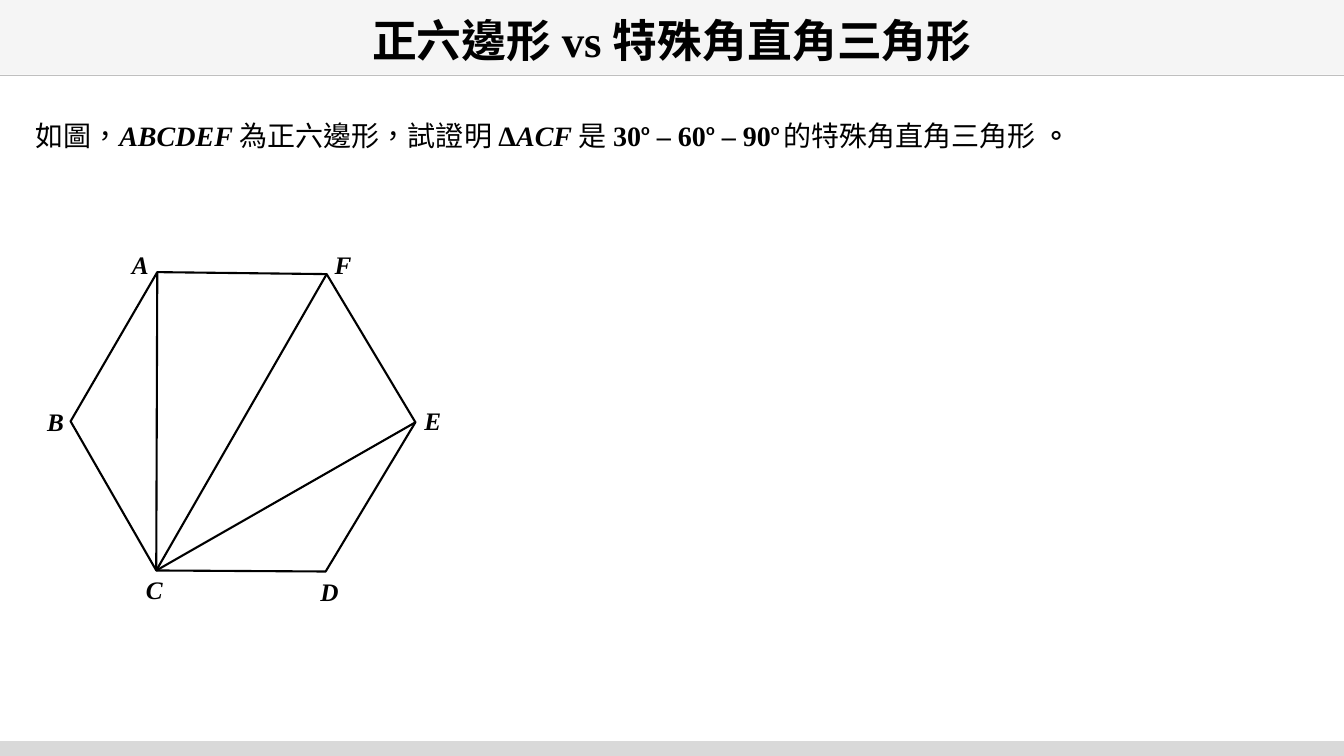
from lxml.etree import SubElement
from pptx import Presentation
from pptx.dml.color import RGBColor
from pptx.enum.lang import MSO_LANGUAGE_ID as Language
from pptx.enum.shapes import MSO_CONNECTOR as Connector, MSO_SHAPE as Shape
from pptx.enum.text import MSO_ANCHOR as Anchor, MSO_AUTO_SIZE as AutoSize, PP_ALIGN as Align
from pptx.oxml.ns import qn
from pptx.util import Inches, Pt

COLORS = {"ink": "000000", "band": "F5F5F5", "rule": "BFBFBF", "footer": "D9D9D9"}
SERIF, SANS = "Times New Roman", "Calibri"
VERTICES = {"A": (0.86, 0), "F": (2.54, 0.02), "E": (3.42, 1.49),
            "D": (2.53, 2.97), "C": (0.85, 2.96), "B": (0, 1.48)}
LABELS = {"A": (0.51, -0.28), "B": (-0.33, 1.28), "C": (0.65, 2.95),
          "D": (2.38, 2.97), "E": (3.41, 1.27), "F": (2.52, -0.28)}
STATEMENT = [("如圖，", ""), ("ABCDEF ", "bi"), ("為正六邊形，試證明 ", ""), ("Δ", "b"),
             ("ACF ", "bi"), ("是 ", ""), ("30", "b"), ("o", "bcs"), (" – 60", "b"),
             ("o", "bcs"), (" – 90", "b"), ("o ", "bcs"), ("的特殊角直角三角形 ", ""),
             ("。", "bc")]


def rgb(name):
    """Return the named colour."""
    return RGBColor.from_string(COLORS[name])


def format_run(run, size, style):
    """Format a run; style letters are b bold, i italic, c sans font, s superscript."""
    font = run.font
    font.size, font.name = Pt(size), SANS if "c" in style else SERIF
    font.bold, font.italic = "b" in style, "i" in style
    font.color.rgb = rgb("ink")
    font.language_id = Language.TRADITIONAL_CHINESE
    if "s" in style:
        run._r.get_or_add_rPr().set("baseline", "40000")


def add_line(shapes, start, end, color, width):
    """Draw a straight line between two points in inches."""
    line = shapes.add_connector(Connector.STRAIGHT, *map(Inches, start + end))
    line.line.color.rgb, line.line.width = rgb(color), Pt(width)
    SubElement(line._element.spPr, qn("a:effectLst"))


def add_text(slide, left, top, width, height, pieces, size):
    """Add a text box of styled pieces and return its paragraph."""
    box = slide.shapes.add_textbox(*map(Inches, (left, top, width, height)))
    box.text_frame.word_wrap = True
    box.text_frame.auto_size = AutoSize.SHAPE_TO_FIT_TEXT
    paragraph = box.text_frame.paragraphs[0]
    for text, style in pieces:
        run = paragraph.add_run()
        run.text = text
        format_run(run, size, style)
    return paragraph


def add_header(slide, width, height):
    """Fill the title band and draw the rule below it."""
    title = slide.shapes.title
    title.left, title.top, title.width, title.height = map(Inches, (0, 0, width, height))
    title.fill.solid()
    title.fill.fore_color.rgb = rgb("band")
    frame = title.text_frame
    frame.text = "正六邊形 vs 特殊角直角三角形"
    frame.auto_size = AutoSize.NONE
    frame.vertical_anchor = Anchor.MIDDLE
    frame.margin_top, frame.margin_bottom = Inches(0.12), 0
    paragraph = frame.paragraphs[0]
    paragraph.alignment, paragraph.line_spacing = Align.CENTER, 0.9
    format_run(paragraph.runs[0], 32, "b")
    add_line(slide.shapes, (0, height + 0.01), (width, height + 0.01), "rule", 0.5)


def add_footer(slide, top, width, height):
    """Draw the bar along the bottom edge."""
    bar = slide.shapes.add_shape(Shape.RECTANGLE, *map(Inches, (0, top, width, height)))
    bar.shadow.inherit = False
    bar.fill.solid()
    bar.fill.fore_color.rgb = bar.line.color.rgb = rgb("footer")
    bar.line.width = Pt(1)


def add_hexagon(slide, left, top):
    """Draw the hexagon, its diagonals from C and its vertex labels."""
    points = {name: (left + x, top + y) for name, (x, y) in VERTICES.items()}
    group = slide.shapes.add_group_shape()
    first, *others = [tuple(map(Inches, point)) for point in points.values()]
    builder = group.shapes.build_freeform(*first)
    builder.add_line_segments(others, close=True)
    outline = builder.convert_to_shape()
    outline.shadow.inherit = False
    outline.fill.background()
    outline.line.color.rgb, outline.line.width = rgb("ink"), Pt(1.5)
    for end in "FAE":
        add_line(group.shapes, points["C"], points[end], "ink", 1.5)
    for name, (x, y) in LABELS.items():
        add_text(slide, left + x, top + y, 0.34 if name in "DF" else 1.04, 0.4,
                 [(name, "bi")], 18)


def main():
    """Build and save the slide."""
    presentation = Presentation()
    presentation.slide_width, presentation.slide_height = Inches(13.33), Inches(7.5)
    slide = presentation.slides.add_slide(presentation.slide_layouts[5])
    add_footer(slide, 7.36, 13.33, 0.14)
    add_header(slide, 13.33, 0.74)
    add_text(slide, 0.25, 0.96, 12.87, 0.55, STATEMENT, 20).line_spacing = 1.5
    add_hexagon(slide, 0.7, 2.7)
    presentation.save("out.pptx")


if __name__ == "__main__":
    main()
